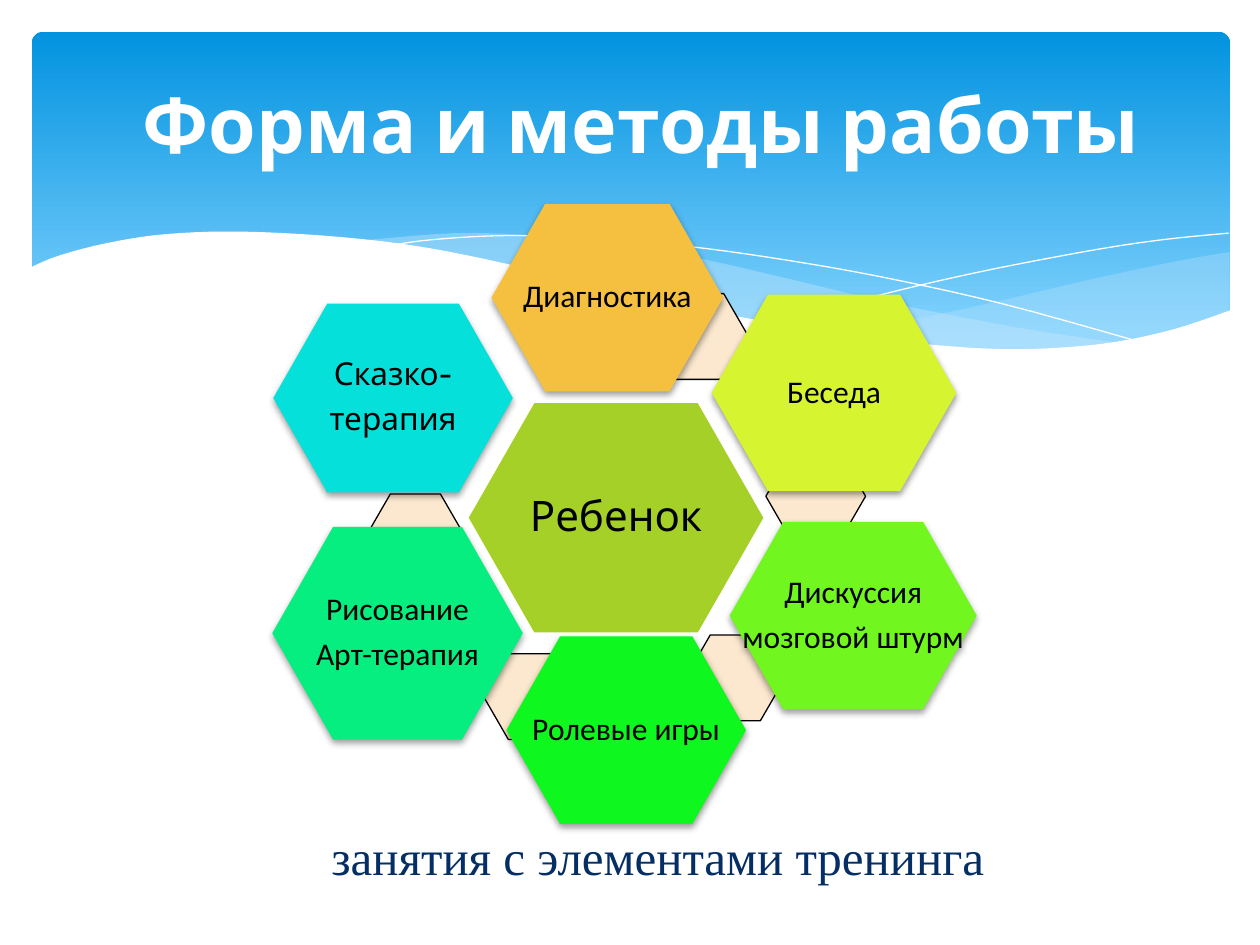
"""Build the slide on forms and methods of work: a ring of six hexagons around the child."""
from lxml import etree
from pptx import Presentation
from pptx.dml.color import RGBColor
from pptx.enum.shapes import MSO_SHAPE
from pptx.enum.text import MSO_ANCHOR, PP_ALIGN
from pptx.oxml.ns import qn
from pptx.util import Cm, Pt

HEXAGON, ROUNDED = MSO_SHAPE.HEXAGON, MSO_SHAPE.ROUNDED_RECTANGLE
MIDDLE, TOP, CENTER = MSO_ANCHOR.MIDDLE, MSO_ANCHOR.TOP, PP_ALIGN.CENTER

TITLE = "Форма и методы работы"
FOOTER = "занятия с элементами тренинга"
CHILD = (["Ребенок"], "Cabin", "A5D028", (9.45, 8.13, 5.94, 4.62))
METHODS = [
    (["Диагностика"], "Calibri", "F5C040", (9.91, 4.11, 4.67, 3.78)),
    (["Беседа"], "Calibri", "D6F530", (14.35, 5.94, 4.93, 3.96)),
    (["Дискуссия", "мозговой штурм"], "Calibri", "72F61F", (14.71, 10.52, 4.98, 3.78)),
    (["Ролевые игры"], "Calibri", "0EF71E", (10.21, 12.83, 4.83, 3.78)),
    (["Рисование", "Арт-терапия"], "Calibri", "07EE80", (5.49, 10.62, 5.05, 4.29)),
    (["Сказко-", "терапия"], "Cabin", "05E0DB", (5.51, 6.12, 4.83, 3.81)),
]
LINKS = [(13.08, 5.92), (15.44, 9.14), (13.82, 12.8), (9.75, 13.18), (7.37, 9.96)]
LINK_SIZE = (2.01, 1.73)

PALE_WAVES = [
    (29, [
        [(24.79, 5.08), (23.75, 5.26), (21.87, 5.66), (19.79, 6.15), (17.93, 6.53), (16.79, 6.73)],
        [(16.79, 6.73), (17.91, 6.88), (19.23, 7.01), (20.68, 7.06), (22.15, 6.96),
         (23.39, 6.73), (24.79, 6.27)],
    ]),
    (40, [
        [(22.68, 6.93), (20.5, 6.6), (17.93, 6.1), (15.98, 5.64), (14.1, 5.21), (12.42, 4.93),
         (10.67, 4.75), (9.17, 4.7), (7.26, 4.85)],
        [(7.26, 4.85), (9.19, 5.16), (11.4, 5.64), (13.46, 6.1), (15.27, 6.48), (17.27, 6.81),
         (19, 7.01), (20.5, 7.06), (21.77, 7.04), (22.68, 6.93)],
    ]),
]
WAVE_LINES = [
    [(7.85, 4.95), (8.74, 4.83), (10.19, 4.75), (11.91, 4.8), (13.54, 4.93), (15.44, 5.18),
     (17.65, 5.56), (20.19, 6.12), (23.04, 6.91)],
    [(15.57, 6.53), (17.65, 5.97), (19.71, 5.49), (22, 5.05), (23.47, 4.83), (24.77, 4.7)],
]
WHITE_WAVE = [
    [(24.82, 6.25), (23.62, 6.65), (22.23, 6.93), (20.55, 7.04), (18.9, 6.96), (16.97, 6.73),
     (14.71, 6.35), (12.78, 5.92), (10.62, 5.41), (8.64, 5), (6.88, 4.78), (4.9, 4.67),
     (3.35, 4.72), (2.16, 4.9), (1.17, 5.16), (0.58, 5.41)],
    [(0.58, 8.36), (24.82, 8.36)],
]


def rgb(value):
    return RGBColor.from_string(value)


def lengths(values):
    return [Cm(value) for value in values]


def paint(shape, fill=None, line=None, width=0.75):
    shape.shadow.inherit = False
    if fill:
        shape.fill.solid()
        shape.fill.fore_color.rgb = rgb(fill)
    else:
        shape.fill.background()
    if line:
        shape.line.color.rgb = rgb(line)
        shape.line.width = Pt(width)
    else:
        shape.line.fill.background()


def smooth(knots, steps=5):
    """Return points of a Catmull-Rom curve through the knots."""
    padded = [knots[0], *knots, knots[-1]]
    points = [knots[0]]
    for a, b, c, d in zip(padded, padded[1:], padded[2:], padded[3:]):
        for step in range(1, steps + 1):
            t = step / steps
            points.append(tuple(
                (2 * q + (r - p) * t + (2 * p - 5 * q + 4 * r - s) * t**2
                 + (3 * q - p - 3 * r + s) * t**3) / 2
                for p, q, r, s in zip(a, b, c, d)))
    return points


def add_curve(shapes, arcs, close=True):
    points = [lengths(point) for arc in arcs for point in smooth(arc)]
    builder = shapes.build_freeform(*points[0], scale=1.0)
    builder.add_line_segments(points[1:], close=close)
    return builder.convert_to_shape()


def add_hexagon(shapes, box, fill, line=None, adjust=0.286):
    hexagon = shapes.add_shape(HEXAGON, *lengths(box))
    hexagon.adjustments[0] = adjust
    paint(hexagon, fill, line)
    return hexagon


def cast_shadow(shape):
    effects = shape._element.spPr.find(qn("a:effectLst"))
    shadow = etree.SubElement(effects, qn("a:outerShdw"), blurRad=str(Pt(4)), dist=str(Pt(2)),
                              dir="5400000", rotWithShape="0")
    color = etree.SubElement(shadow, qn("a:srgbClr"), val="000000")
    etree.SubElement(color, qn("a:alpha"), val="38000")


def write(shape, lines, font, size, color, bold=False, wrap=False, anchor=MIDDLE):
    frame = shape.text_frame
    frame.word_wrap = wrap
    frame.vertical_anchor = anchor
    frame.text = "\n".join(lines)
    for paragraph in frame.paragraphs:
        paragraph.alignment = CENTER
        paragraph.font.name = font
        paragraph.font.size = Pt(size)
        paragraph.font.bold = bold
        paragraph.font.color.rgb = rgb(color)
    return frame


def add_background(shapes):
    sky = shapes.add_shape(ROUNDED, *lengths((0.64, 0.64, 24.16, 6.86)))
    sky.adjustments[0] = 0.034
    paint(sky)
    sky.fill.gradient()
    sky.fill.gradient_angle = 270
    for stop, position, color in zip(sky.fill.gradient_stops, (0, 0.9), ("0293E0", "83D3FE")):
        stop.position = position
        stop.color.rgb = rgb(color)
    for opacity, arcs in PALE_WAVES:
        wave = add_curve(shapes, arcs)
        paint(wave, "C6E7FC")
        color = wave._element.spPr.find(qn("a:solidFill"))[0]
        etree.SubElement(color, qn("a:alpha"), val=str(opacity * 1000))
    for knots in WAVE_LINES:
        paint(add_curve(shapes, [knots], close=False), line="FFFFFF", width=0)
    white_curve, white_base = WHITE_WAVE
    paint(add_curve(shapes, [white_curve, white_base]), "FFFFFF")


def add_method(shapes, method, size):
    lines, font, fill, box = method
    hexagon = add_hexagon(shapes, box, fill)
    frame = write(hexagon, lines, font, size, "000000")
    frame.margin_left = frame.margin_right = frame.margin_top = frame.margin_bottom = Cm(0.08)
    for paragraph in frame.paragraphs:
        paragraph.line_spacing = 0.9
        paragraph.space_after = Pt(0.35 * size)
    return hexagon


def main():
    deck = Presentation()
    deck.slide_width, deck.slide_height = Cm(25.4), Cm(19.05)
    shapes = deck.slides.add_slide(deck.slide_layouts[6]).shapes
    add_background(shapes)
    add_method(shapes, CHILD, 24)
    for corner in LINKS:
        add_hexagon(shapes, corner + LINK_SIZE, "FBE8CF", "000000", 0.289)
    for method in METHODS:
        cast_shadow(add_method(shapes, method, 18))
    footer = shapes.add_textbox(*lengths((5.11, 16.54, 15.06, 1.45)))
    footer_frame = write(footer, [FOOTER], "Times New Roman", 28, "052E65", anchor=TOP)
    footer_frame.paragraphs[0]._p.get_or_add_pPr().set("indent", str(Cm(1.24)))
    title = shapes.add_textbox(*lengths((1.5, 0.74, 22.86, 3.48)))
    write(title, [TITLE], "Cabin", 44, "FFFFFF", bold=True, wrap=True)
    deck.save("out.pptx")


if __name__ == "__main__":
    main()
